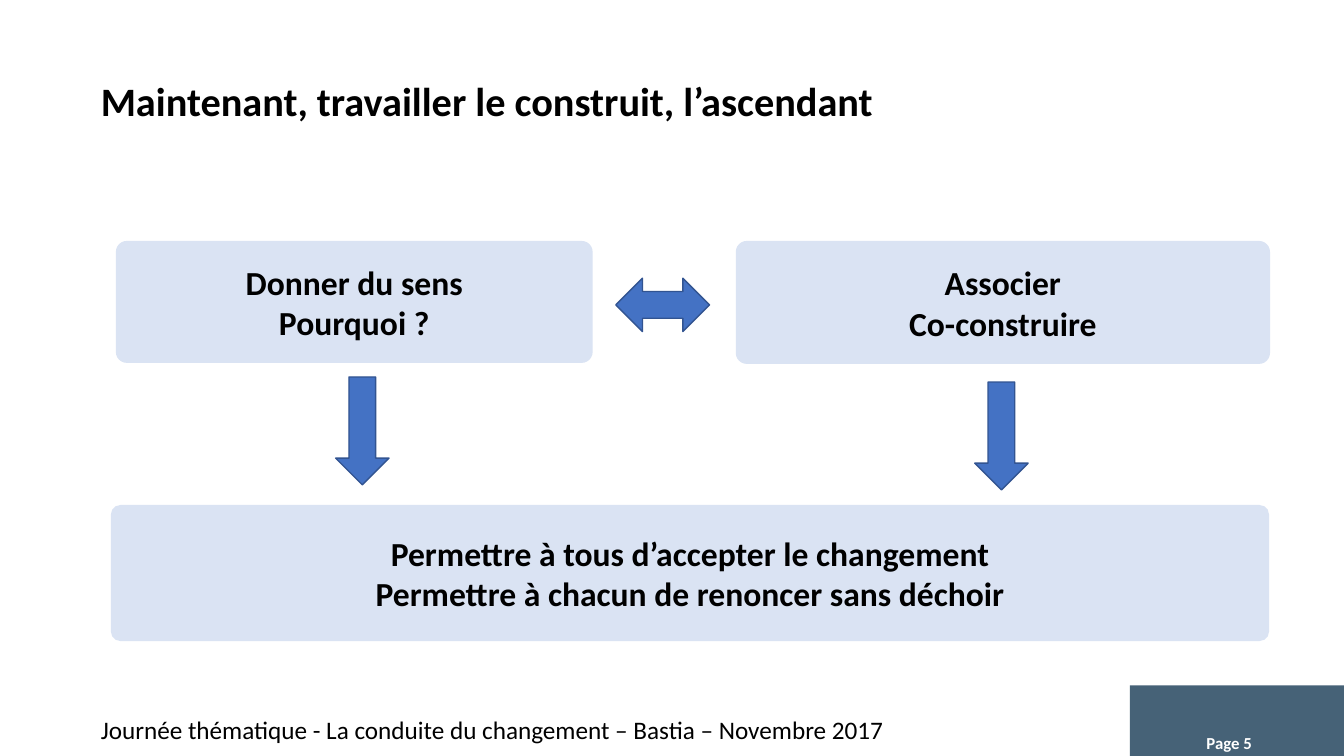
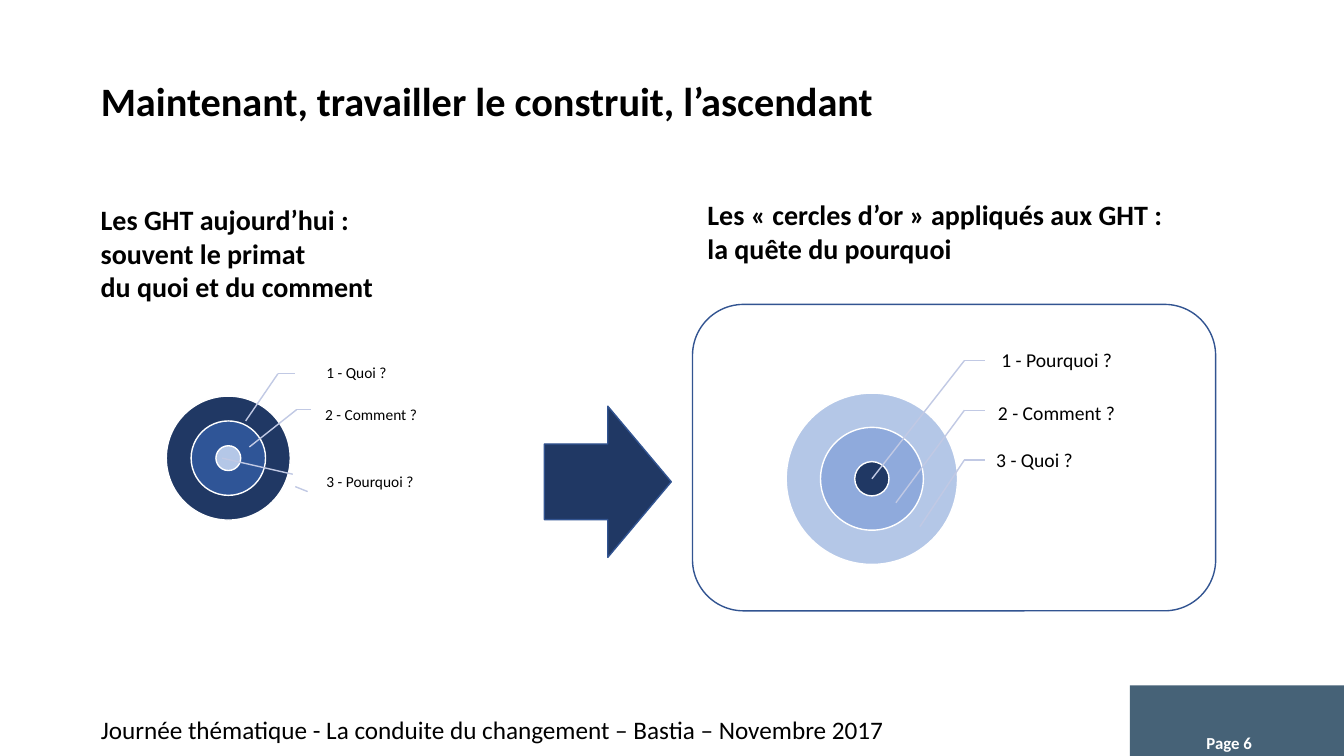
from dataclasses import dataclass

import pptx
import pptx.dml.color
import pptx.enum.shapes
import pptx.enum.text
import pptx.oxml.ns
import pptx.util
from lxml import etree

SHAPE = pptx.enum.shapes.MSO_SHAPE
ALIGN = pptx.enum.text.PP_ALIGN
ANCHOR = pptx.enum.text.MSO_ANCHOR

# Square grid: 40 columns by 22.5 rows
CELL = pptx.util.Inches(1) / 3
COLUMNS, ROWS = 40, 22.5


@dataclass(frozen=True)
class Theme:
    font: str = "Calibri"
    text: str = "000000"
    white: str = "FFFFFF"
    band: str = "466277"
    card: str = "DAE3F3"
    arrow: str = "4472C4"
    outline: str = "325491"
    leader: str = "C1C9E4"
    navy: str = "203864"
    blue: str = "2F5597"
    sky: str = "8FAADC"
    pale: str = "B4C7E7"
    title_size: float = 28.8
    card_size: int = 24
    heading_size: int = 20
    footer_size: int = 18
    page_size: int = 12
    line_width: int = 1


THEME = Theme()


@dataclass(frozen=True)
class Box:
    """A rectangle counted in grid cells."""
    left: float
    top: float
    width: float
    height: float

    def inside(self, column, row, width, height):
        return Box(self.left + column, self.top + row, width, height)

    def point(self, across, down):
        return self.left + across * self.width, self.top + down * self.height

    def share(self, across, down, width, height):
        return Box(*self.point(across, down), width * self.width, height * self.height)

    def emu(self):
        return [cells(value) for value in (self.left, self.top, self.width, self.height)]


SLIDE_BOX = Box(0, 0, COLUMNS, ROWS)


def cells(count):
    return pptx.util.Emu(round(count * CELL))


def colour(code):
    return pptx.dml.color.RGBColor.from_string(code)


# Basic parts
def write(shape, lines, size, bold=False, code=THEME.text, align=ALIGN.LEFT,
          anchor=ANCHOR.TOP, margins=(0, 0, 0, 0), spacing=None):
    frame = shape.text_frame
    frame.word_wrap = True
    frame.vertical_anchor = anchor
    (frame.margin_left, frame.margin_top,
     frame.margin_right, frame.margin_bottom) = map(pptx.util.Pt, margins)
    frame.text = "\n".join(lines)
    for paragraph in frame.paragraphs:
        paragraph.alignment = align
        paragraph.line_spacing = spacing
        for run in paragraph.runs:
            run.font.name = THEME.font
            run.font.size = pptx.util.Pt(size)
            run.font.bold = bold
            run.font.color.rgb = colour(code)


def add_text(slide, box, lines, size, **style):
    write(slide.shapes.add_textbox(*box.emu()), lines, size, **style)


def add_shape(slide, kind, box, fill=None, line=None):
    shape = slide.shapes.add_shape(kind, *box.emu())
    shape.shadow.inherit = False
    if fill:
        shape.fill.solid()
        shape.fill.fore_color.rgb = colour(fill)
    else:
        shape.fill.background()
    if line:
        shape.line.color.rgb = colour(line)
        shape.line.width = pptx.util.Pt(THEME.line_width)
    else:
        shape.line.fill.background()
    return shape


def add_leader(slide, start, end):
    connector = slide.shapes.add_connector(
        pptx.enum.shapes.MSO_CONNECTOR.STRAIGHT, *map(cells, start + end))
    connector.line.color.rgb = colour(THEME.leader)
    connector.line.width = pptx.util.Pt(THEME.line_width)
    etree.SubElement(connector._element.spPr, pptx.oxml.ns.qn("a:effectLst"))


def add_card(slide, box, lines, rounding):
    card = add_shape(slide, SHAPE.ROUNDED_RECTANGLE, box, THEME.card)
    card.adjustments[0] = rounding
    write(card, lines, THEME.card_size, bold=True, align=ALIGN.CENTER, anchor=ANCHOR.MIDDLE)


def add_heading(slide, box, lines):
    add_text(slide, box, lines, THEME.heading_size, bold=True, margins=(7.2, 3.6, 7.2, 3.6))


# Title, footer and page band shared by every slide
def add_frame(slide, box, title, page):
    add_text(slide, box.inside(3, 21.27, 26.28, 0.9),
             ["Journée thématique - La conduite du changement – Bastia – Novembre 2017"],
             THEME.footer_size, anchor=ANCHOR.BOTTOM)
    add_shape(slide, SHAPE.RECTANGLE, box.inside(33.63, 20.4, 6.37, 2.1), THEME.band)
    add_text(slide, box.inside(28.26, 21.06, 9, 1.35), [f"Page {page}"], THEME.page_size,
             bold=True, code=THEME.white, align=ALIGN.RIGHT, anchor=ANCHOR.BOTTOM)
    add_text(slide, box.inside(3, 2.43, 34.5, 2.7), [title], THEME.title_size,
             bold=True, spacing=0.9)


# Two linked ideas leading down to a result
def add_idea_flow(slide, box):
    add_card(slide, box.inside(0, 7.86, 34.47, 4.05),
             ["Permettre à tous d’accepter le changement",
              "Permettre à chacun de renoncer sans déchoir"], 0.07)
    add_card(slide, box.inside(18.6, 0, 15.9, 3.66), ["Associer", "Co-construire"], 0.09)
    add_card(slide, box.inside(0.15, 0, 14.19, 3.63), ["Donner du sens", "Pourquoi ?"], 0.09)
    length, thickness = 3.21, 1.59
    for column, row in ((6.69, 4.05), (25.71, 4.2)):
        add_shape(slide, SHAPE.DOWN_ARROW, box.inside(column, row, thickness, length),
                  THEME.arrow, THEME.outline)
    add_shape(slide, SHAPE.LEFT_RIGHT_ARROW, box.inside(15.03, 1.11, 2.79, thickness),
              THEME.arrow, THEME.outline)


# Concentric discs; labels and leaders are in shares of the outer disc
def add_target(slide, box, fills, labels, size):
    for ratio, fill in zip((1, 0.6, 0.2), fills):
        edge = (1 - ratio) / 2
        add_shape(slide, SHAPE.OVAL, box.share(edge, edge, ratio, ratio), fill, THEME.white)
    for text, (left, top, width), segments in labels:
        for start, end in segments:
            add_leader(slide, box.point(*start), box.point(*end))
        add_text(slide, box.share(left, top, width, 0.29), [text], size,
                 anchor=ANCHOR.MIDDLE, margins=(0.57 * size, 1.4, 1.4, 1.4), spacing=0.9)


def bent(target, bend, end):
    """A slanted stroke to the bend, then a level one to the label."""
    return (target, bend), (bend, (end, bend[1]))


def add_today(slide, box):
    add_heading(slide, box.inside(0, 0.15, 20, 3.33),
                ["Les GHT aujourd’hui\u00a0:", "souvent le primat", "du quoi et du comment"])
    labels = [
        ("1 - Quoi ?", (1.22, -0.33, 0.93), bent((0.64, 0.2), (0.9, -0.18), 1.04)),
        ("2 - Comment ?", (1.21, 0.01, 0.94), bent((0.67, 0.41), (1.05, 0.11), 1.17)),
        ("3 - Pourquoi ?", (1.22, 0.55, 0.8),
         (((0.45, 0.5), (1.02, 0.63)), ((1.04, 0.73), (1.14, 0.77)))),
    ]
    add_target(slide, box.inside(2.25, 6.06, 3.69, 3.69),
               (THEME.navy, THEME.blue, THEME.pale), labels, 11)


def add_golden_circles(slide, box):
    add_heading(slide, box.inside(0.15, 0, 19.24, 2.31),
                ["Les «\u00a0cercles d’or\u00a0» appliqués aux GHT\u00a0:", "la quête du pourquoi"])
    panel = box.inside(0, 3.33, 15.57, 9.12)
    add_shape(slide, SHAPE.ROUNDED_RECTANGLE, panel, line=THEME.outline)
    places = [
        ("1 - Pourquoi ?", (1.19, -0.33, 1.06)),
        ("2 - Comment ?", (1.17, -0.02, 1.06)),
        ("3 - Quoi ?", (1.16, 0.25, 0.83)),
    ]
    labels = []
    for index, (text, place) in enumerate(places):
        target = 0.5 + 0.14 * index
        bend = (1.04, -0.19 + 0.29 * index)
        labels.append((text, place, bent((target, target), bend, 1.16)))
    add_target(slide, panel.inside(2.79, 2.64, 5.1, 5.1),
               (THEME.pale, THEME.sky, THEME.navy), labels, 14)


# From today's order of questions to the golden circles
def add_circle_comparison(slide, box):
    add_today(slide, box)
    add_golden_circles(slide, box.inside(17.91, 0, 19.39, 12.45))
    add_shape(slide, SHAPE.RIGHT_ARROW, box.inside(13.5, 6.36, 3.78, 4.5),
              THEME.navy, THEME.outline)


def main():
    presentation = pptx.Presentation()
    presentation.slide_width = cells(COLUMNS)
    presentation.slide_height = cells(ROWS)
    title = "Maintenant, travailler le construit, l’ascendant"
    bodies = [
        (add_idea_flow, SLIDE_BOX.inside(3.3, 7.17, 34.5, 11.91)),
        (add_circle_comparison, SLIDE_BOX.inside(2.7, 5.73, 37.3, 12.45)),
    ]
    for page, (add_body, body) in enumerate(bodies, start=5):
        slide = presentation.slides.add_slide(presentation.slide_layouts[6])
        add_frame(slide, SLIDE_BOX, title, page)
        add_body(slide, body)
    presentation.save("out.pptx")


if __name__ == "__main__":
    main()
